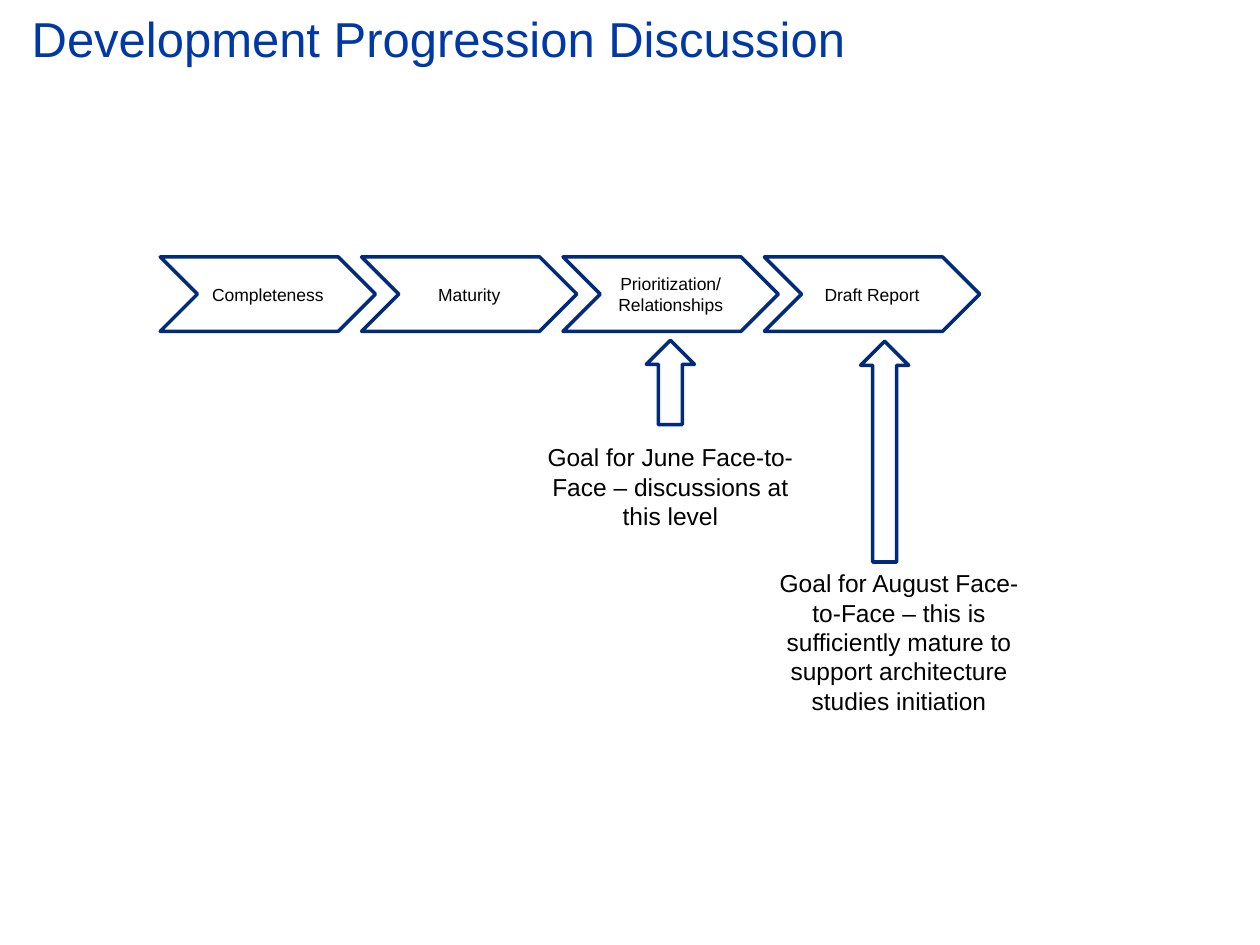
from dataclasses import dataclass

from pptx import Presentation
from pptx.dml.color import RGBColor
from pptx.enum.shapes import MSO_SHAPE
from pptx.enum.text import MSO_ANCHOR, PP_ALIGN
from pptx.util import Cm, Pt

CHEVRON, ARROW = MSO_SHAPE.CHEVRON, MSO_SHAPE.UP_ARROW
TOP, MIDDLE, BOTTOM = MSO_ANCHOR.TOP, MSO_ANCHOR.MIDDLE, MSO_ANCHOR.BOTTOM
LEFT, CENTER = PP_ALIGN.LEFT, PP_ALIGN.CENTER


@dataclass(frozen=True)
class Theme:
    font: str = "Arial"
    title: RGBColor = RGBColor(0x00, 0x39, 0xA6)
    line: RGBColor = RGBColor(0x00, 0x2A, 0x7B)
    fill: RGBColor = RGBColor(0xFF, 0xFF, 0xFF)
    ink: RGBColor = RGBColor(0x00, 0x00, 0x00)
    title_size: Pt = Pt(28)
    goal_size: Pt = Pt(14)
    step_size: Pt = Pt(10)
    width: Pt = Pt(2)


@dataclass(frozen=True)
class Box:
    """Left, top, width and height in centimetres."""
    x: float
    y: float
    w: float
    h: float

    def place(self) -> tuple:
        return Cm(self.x), Cm(self.y), Cm(self.w), Cm(self.h)


@dataclass(frozen=True)
class Goal:
    text: str
    box: Box
    arrow: Box


THEME = Theme()
STEPS = ["Completeness", "Maturity", "Prioritization/\nRelationships", "Draft Report"]
FIRST = Box(3.23, 5.18, 4.34, 1.5)
PITCH = 4.06
GOALS = [
    Goal("Goal for June Face-to-Face – discussions at this level",
         Box(10.77, 8.79, 5.49, 2.06), Box(13.03, 6.86, 0.97, 1.7)),
    Goal("Goal for August Face-to-Face – this is sufficiently mature to "
         "support architecture studies initiation",
         Box(15.19, 11.33, 5.87, 3.25), Box(17.35, 6.88, 0.97, 4.45)),
]


def apply(target, values: dict) -> None:
    for name, value in values.items():
        setattr(target, name, value)


def write(shape, text: str, font: dict, para: dict, frame: dict) -> None:
    apply(shape.text_frame, {"word_wrap": True, "text": text, **frame})
    for item in shape.text_frame.paragraphs:
        apply(item, para)
        for run in item.runs:
            apply(run.font, {"name": THEME.font, "size": font["size"]})
            run.font.color.rgb = font["color"]


def draw(slide, kind: MSO_SHAPE, box: Box):
    shape = slide.shapes.add_shape(kind, *box.place())
    shape.shadow.inherit = False
    shape.fill.solid()
    shape.fill.fore_color.rgb = THEME.fill
    shape.line.color.rgb = THEME.line
    shape.line.width = THEME.width
    return shape


def main() -> None:
    deck = Presentation()
    apply(deck, {"slide_width": Cm(25.4), "slide_height": Cm(19.05)})
    slide = deck.slides.add_slide(deck.slide_layouts[6])

    # Title
    head = slide.shapes.add_textbox(*Box(0.64, 0.3, 23.24, 1.07).place())
    sides = ("left", "top", "right", "bottom")
    write(head, "Development Progression Discussion",
          {"size": THEME.title_size, "color": THEME.title},
          {"alignment": LEFT, "line_spacing": 0.9},
          {"vertical_anchor": BOTTOM, **{f"margin_{side}": 0 for side in sides}})

    # Chain of steps
    for index, text in enumerate(STEPS):
        box = Box(FIRST.x + index * PITCH, FIRST.y, FIRST.w, FIRST.h)
        write(draw(slide, CHEVRON, box), text,
              {"size": THEME.step_size, "color": THEME.ink},
              {"alignment": CENTER}, {"vertical_anchor": MIDDLE})

    # Goals with their arrows
    for goal in GOALS:
        note = slide.shapes.add_textbox(*goal.box.place())
        write(note, goal.text, {"size": THEME.goal_size, "color": THEME.ink},
              {"alignment": CENTER}, {"vertical_anchor": TOP})
        draw(slide, ARROW, goal.arrow)

    deck.save("out.pptx")


if __name__ == "__main__":
    main()
